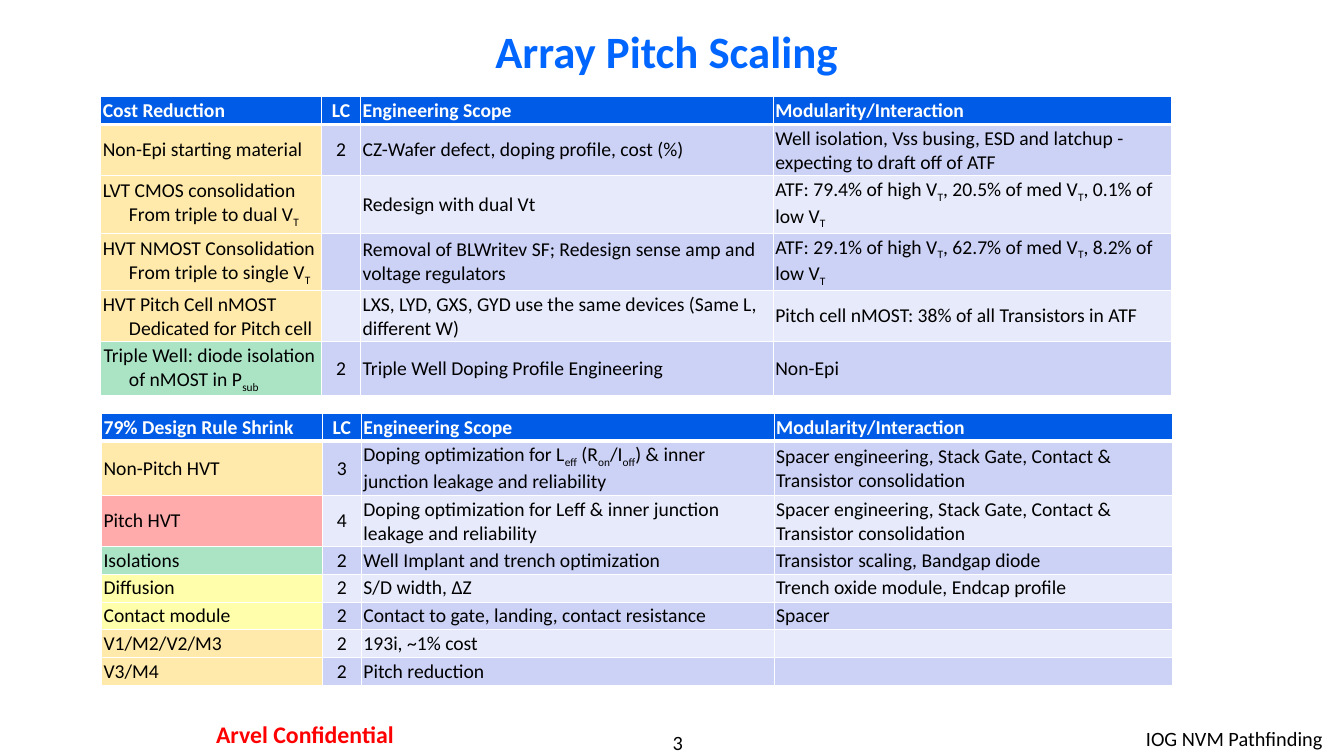
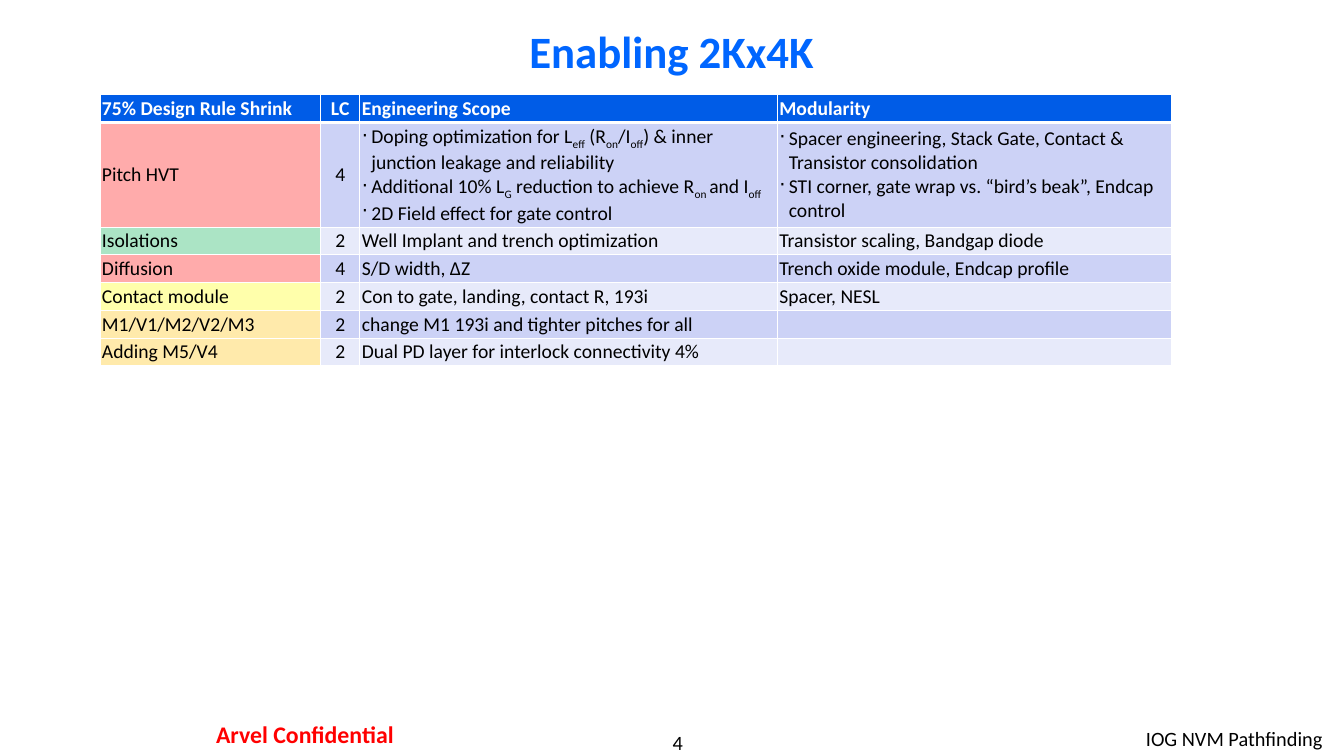
from lxml import etree
from pptx import Presentation
from pptx import util as u
from pptx.dml.color import RGBColor
from pptx.enum import text
from pptx.oxml.ns import qn

AMBER, GREEN, RED, YELLOW = "FFC000", "00B050", "FF0000", "FFFF00"
BLACK, WHITE = "000000", "FFFFFF"
LEFT, MID, RIGHT = text.PP_ALIGN.LEFT, text.PP_ALIGN.CENTER, text.PP_ALIGN.RIGHT

SPACER = "Spacer engineering, Stack Gate, Contact & Transistor consolidation"
DOPING = "Doping optimization for L|eff| (R|on|/I|off|) & inner junction leakage and reliability"
TRENCH = "Well Implant and trench optimization"
SCALING = "Transistor scaling, Bandgap diode"
WIDTH = "S/D width, ∆Z"
OXIDE = "Trench oxide module, Endcap profile"

COST = [
    (AMBER, "Non-Epi starting material", "2", "CZ-Wafer defect, doping profile, cost (%)",
     "Well isolation, Vss busing, ESD and latchup - expecting to draft off of ATF"),
    (AMBER, "LVT CMOS consolidation\n>From triple to dual V|T|", "", "Redesign with dual Vt",
     "ATF: 79.4% of high V|T|, 20.5% of med V|T|, 0.1% of low V|T|"),
    (AMBER, "HVT NMOST Consolidation\n>From triple to single V|T|", "",
     "Removal of BLWritev SF; Redesign sense amp and voltage regulators",
     "ATF: 29.1% of high V|T|, 62.7% of med V|T|, 8.2% of low V|T|"),
    (AMBER, "HVT Pitch Cell nMOST\n>Dedicated for Pitch cell", "",
     "LXS, LYD, GXS, GYD use the same devices (Same L, different W)",
     "Pitch cell nMOST: 38% of all Transistors in ATF"),
    (GREEN, "<Triple Well: diode isolation of nMOST in P|sub|", "2",
     "Triple Well Doping Profile Engineering", "Non-Epi"),
]
SHRINK = [
    (AMBER, "Non-Pitch HVT", "3", DOPING, SPACER),
    (RED, "Pitch HVT", "4",
     "Doping optimization for Leff & inner junction leakage and reliability", SPACER),
    (GREEN, "Isolations", "2", TRENCH, SCALING),
    (YELLOW, "Diffusion", "2", WIDTH, OXIDE),
    (YELLOW, "Contact module", "2", "Contact to gate, landing, contact resistance", "Spacer"),
    (AMBER, "V1/M2/V2/M3", "2", "193i, ~1% cost", ""),
    (AMBER, "V3/M4", "2", "Pitch reduction", ""),
]
ENABLE = [
    (RED, "Pitch HVT", "4",
     f"*{DOPING}\n*Additional 10% L|G| reduction to achieve R|on |and I|off|\n"
     "*2D Field effect for gate control",
     f"*{SPACER}\n*STI corner, gate wrap vs. “bird’s beak”, Endcap control"),
    (GREEN, "Isolations", "2", TRENCH, SCALING),
    (RED, "Diffusion", "4", WIDTH, OXIDE),
    (YELLOW, "Contact module", "2", "Con to gate, landing, contact R, 193i", "Spacer, NESL"),
    (AMBER, "M1/V1/M2/V2/M3", "2", "change M1 193i and tighter pitches for all", ""),
    (AMBER, "Adding M5/V4", "2", "Dual PD layer for interlock connectivity 4%", ""),
]


def tint(code):
    return RGBColor.from_string(code)


class Deck:
    """Holds the shared style and the current slide."""

    font = "Calibri"
    head = "005CE7"
    bands = ("CCD2F6", "E7EAFA")
    marks = {">": (0.66, 0), "<": (0.66, -0.64), "*": (0.24, -0.24)}

    def __init__(self):
        self.prs = Presentation()
        self.prs.slide_width = u.Cm(33.87)
        self.prs.slide_height = u.Cm(19.05)

    def page(self, title, num):
        self.slide = self.prs.slides.add_slide(self.prs.slide_layouts[6])
        self.label(title, (2.54, 0.43, 28.78, 1.7), 32, "0066FF", True)
        self.label(str(num), (14.12, 18.39, 5.92, 0.61), 14.5)
        self.label("IOG NVM Pathfinding", (22.43, 18.16, 11.15, 0.89), 14.5, side=RIGHT)
        self.label("Arvel Confidential", (3.94, 17.98, 7.49, 1.04), 17, RED, True)

    def label(self, words, box, size, color=BLACK, bold=False, side=MID):
        frame = self.slide.shapes.add_textbox(*map(u.Cm, box)).text_frame
        frame.word_wrap = True
        frame.vertical_anchor = text.MSO_ANCHOR.MIDDLE
        frame.margin_top = frame.margin_bottom = 0
        self.lines(frame, words, size, color, bold, side)

    def lines(self, frame, words, size, color, bold, side):
        for i, line in enumerate(words.split("\n")):
            para = frame.add_paragraph() if i else frame.paragraphs[0]
            para.alignment = side
            mark = line[:1]
            if mark in self.marks:
                line = line[1:]
                self.indent(para, mark)
            for k, part in enumerate(line.split("|")):
                if part:
                    run = para.add_run()
                    run.text = part
                    font = run.font
                    font.name, font.size, font.bold = self.font, u.Pt(size), bold
                    font.color.rgb = tint(color)
                    if k % 2:
                        run._r.get_or_add_rPr().set("baseline", "-25000")
            if not line:
                etree.SubElement(para._p, qn("a:endParaRPr"), sz=str(size * 100))

    def indent(self, para, mark):
        props = para._p.get_or_add_pPr()
        for key, gap in zip(("marL", "indent"), self.marks[mark]):
            props.set(key, str(u.Cm(gap)))
        if mark == "*":
            etree.SubElement(props, qn("a:buChar"), char="·")

    def table(self, left, top, widths, heads, rows):
        count = len(rows) + 1
        shape = self.slide.shapes.add_table(
            count, len(widths), u.Cm(left), u.Cm(top), u.Cm(sum(widths)), u.Cm(0.7 * count))
        grid = shape.table
        grid.horz_banding = False
        for col, width in zip(grid.columns, widths):
            col.width = u.Cm(width)
        for r, (key, *cells) in enumerate([(self.head, *heads), *rows]):
            for c, words in enumerate(cells):
                cell = grid.cell(r, c)
                self.edges(cell, r)
                self.paint(cell, r, c, key)
                cell.vertical_anchor = text.MSO_ANCHOR.MIDDLE
                cell.margin_left = cell.margin_right = u.Cm(0.05)
                cell.margin_top = cell.margin_bottom = u.Cm(0.05)
                self.lines(cell.text_frame, words, 14, BLACK if r else WHITE,
                           r == 0, MID if c == 1 else LEFT)

    def edges(self, cell, r):
        props = cell._tc.get_or_add_tcPr()
        for side, size in zip("LRTB", (1, 1, 3 if r == 1 else 1, 1 if r else 3)):
            line = etree.SubElement(props, qn("a:ln" + side), w=str(u.Pt(size)))
            fill = etree.SubElement(line, qn("a:solidFill"))
            etree.SubElement(fill, qn("a:srgbClr"), val=WHITE)

    def paint(self, cell, r, c, key):
        plain = r and c
        cell.fill.solid()
        cell.fill.fore_color.rgb = tint(self.bands[(r - 1) % 2] if plain else key)
        if r and not c:
            shade = cell._tc.tcPr.find(qn("a:solidFill")).find(qn("a:srgbClr"))
            etree.SubElement(shade, qn("a:alpha"), val="33000")


def main():
    deck = Deck()
    scope = ("LC", "Engineering Scope")
    cols = (5.56, 0.99, 10.4, 10.03)
    deck.page("Array Pitch Scaling ", 3)
    deck.table(2.54, 2.44, cols, ("Cost Reduction", *scope, "Modularity/Interaction"), COST)
    deck.table(2.56, 10.42, cols,
               ("79% Design Rule Shrink", *scope, "Modularity/Interaction"), SHRINK)
    deck.page("Enabling 2Kx4K", 4)
    deck.table(2.52, 2.39, (5.56, 0.99, 10.52, 9.93),
               ("75% Design Rule Shrink", *scope, "Modularity"), ENABLE)
    deck.prs.save("out.pptx")


if __name__ == "__main__":
    main()
